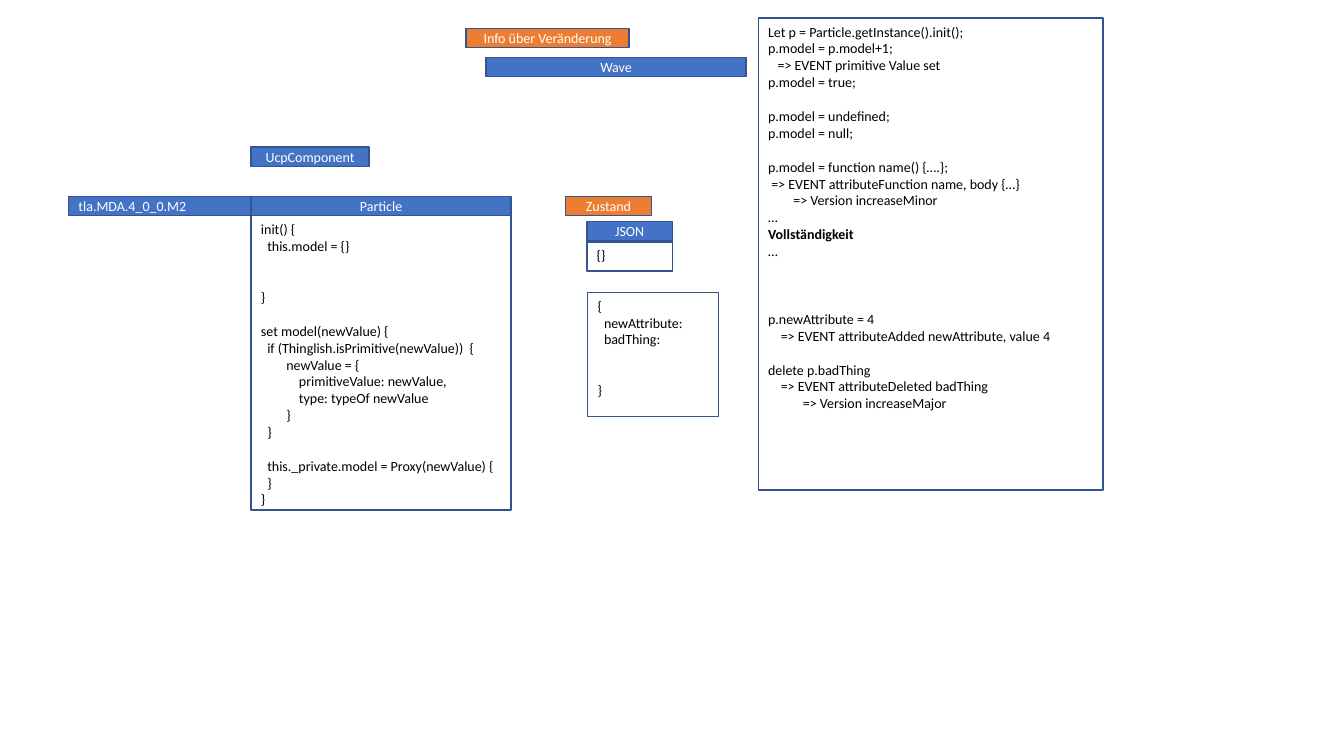
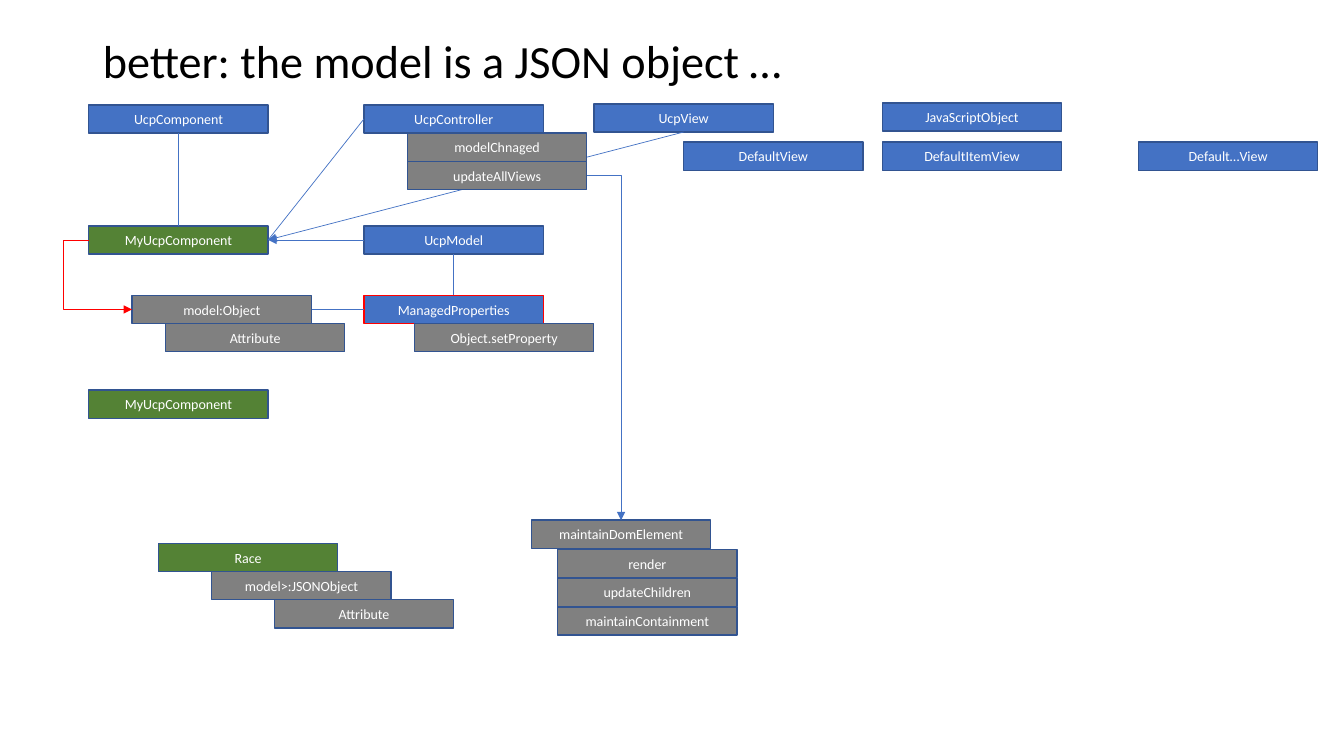
from lxml.etree import SubElement
from pptx import Presentation
from pptx.dml.color import RGBColor as RGB
from pptx.enum.shapes import MSO_CONNECTOR as Link, MSO_SHAPE as Shape
from pptx.enum.text import MSO_ANCHOR as Anchor, MSO_AUTO_SIZE as Fit, PP_ALIGN as Align
from pptx.oxml.ns import qn
from pptx.util import Inches, Pt

HUES = {
    "blue": "4472C4", "edge": "325491", "orange": "ED7D31", "green": "548235",
    "gray": "808080", "red": "FF0000", "white": "FFFFFF", "black": "000000",
}
FONT = "Calibri"
SIZE = 10
SPACE = 0.226 * SIZE  # width of one blank, in points
LEAD = 1.22 * SIZE    # height of one line, in points
TOP, LEFT, BOTTOM, RIGHT = range(4)  # connection sites of a rectangle

INIT = """\
init() {
  this.model = {}


}

set model(newValue) {
  if (Thinglish.isPrimitive(newValue))  {
        newValue = {
            primitiveValue: newValue,
            type: typeOf newValue
        }
  }

  this._private.model = Proxy(newValue) {
  }
}"""

USAGE = """\
Let p = Particle.getInstance().init();
p.model = p.model+1;
   => EVENT primitive Value set
p.model = true;

p.model = undefined;
p.model = null;

p.model = function name() {….};
 => EVENT attributeFunction name, body {…}
        => Version increaseMinor
…
Vollständigkeit
…



p.newAttribute = 4
    => EVENT attributeAdded newAttribute, value 4

delete p.badThing
    => EVENT attributeDeleted badThing
           => Version increaseMajor"""

STATE = """\
{
  newAttribute:
  badThing:


}"""


def hue(name):
    return RGB.from_string(HUES[name])


class Deck:
    """Holds the shared style and the slide being filled."""

    def __init__(self):
        self.prs = Presentation()
        self.prs.slide_width = Inches(13.33)
        self.prs.slide_height = Inches(7.5)
        self.slide = None

    def page(self, title=None):
        layout = self.prs.slide_layouts[5 if title else 6]
        self.slide = self.prs.slides.add_slide(layout)
        if title:
            self.title(title)

    def title(self, text):
        head = self.slide.shapes.title
        head.left, head.top = Inches(0.92), Inches(0.4)
        head.width, head.height = Inches(11.5), Inches(0.53)
        frame = head.text_frame
        frame.auto_size = Fit.NONE
        frame.vertical_anchor = Anchor.MIDDLE
        par = frame.paragraphs[0]
        par.alignment = Align.LEFT
        par.line_spacing = 0.7
        self.run(par, text, "black", 33)

    def run(self, par, text, color, size=SIZE, bold=False):
        run = par.add_run()
        run.text = text
        font = run.font
        font.name, font.size, font.bold = FONT, Pt(size), bold
        font.color.rgb = hue(color)

    def rect(self, x, y, w, h, fill, edge="edge"):
        box = self.slide.shapes.add_shape(
            Shape.RECTANGLE, Inches(x), Inches(y), Inches(w), Inches(h))
        box.shadow.inherit = False
        box.fill.solid()
        box.fill.fore_color.rgb = hue(fill)
        box.line.color.rgb = hue(edge)
        box.line.width = Pt(1)
        return box

    def label(self, text, x, y, w=1.78, h=0.28, fill="blue", edge="edge",
              align=Align.CENTER):
        box = self.rect(x, y, w, h, fill, edge)
        box.text_frame.vertical_anchor = Anchor.MIDDLE
        par = box.text_frame.paragraphs[0]
        par.alignment = align
        self.run(par, text, "white")
        return box

    def stack(self, texts, x, y, step=0.28):
        """Gray labels below one another; returns the last."""
        for i, text in enumerate(texts):
            box = self.label(text, x, y + i * step, fill="gray")
        return box

    def code(self, text, x, y, w, h, bold=None):
        """Panel of code: leading blanks become indents, empty lines spacing."""
        frame = self.rect(x, y, w, h, "white").text_frame
        frame.vertical_anchor = Anchor.TOP
        par, gap = frame.paragraphs[0], 0
        for i, line in enumerate(text.splitlines()):
            words = line.lstrip()
            if not words:
                gap += 1
                continue
            if i:
                par = frame.add_paragraph()
            par.alignment = Align.LEFT
            par.space_before = Pt(gap * LEAD)
            indent = Pt((len(line) - len(words)) * SPACE)
            par._p.get_or_add_pPr().set("marL", str(indent))
            self.run(par, words, "black", bold=words == bold)
            gap = 0

    def link(self, start, out, end, into, color="blue", arrow=False,
             kind=Link.STRAIGHT):
        line = self.slide.shapes.add_connector(kind, 0, 0, 0, 0)
        line.begin_connect(start, out)
        line.end_connect(end, into)
        line.line.color.rgb = hue(color)
        line.line.width = Pt(0.5)
        props = line._element.spPr
        if arrow:
            SubElement(props.find(qn("a:ln")), qn("a:tailEnd"), type="triangle")
        SubElement(props, qn("a:effectLst"))
        return props.find(qn("a:prstGeom"))

    def bend(self, *ends, color="blue", adj=None):
        """Elbow arrow: one corner, or two with the middle leg at adj."""
        geom = self.link(*ends, color=color, arrow=True, kind=Link.ELBOW)
        if adj is None:
            geom.set("prst", "bentConnector2")
        else:
            guides = geom.find(qn("a:avLst"))
            SubElement(guides, qn("a:gd"), name="adj1", fmla=f"val {adj}")


def particle(deck):
    deck.page()
    bar = 0.19
    for text, x, y, w, fill in (
        ("Particle", 2.49, 1.95, 2.58, "blue"),
        ("JSON", 5.82, 2.2, 0.85, "blue"),
        ("UcpComponent", 2.49, 1.46, 1.17, "blue"),
        ("Wave", 4.82, 0.57, 2.58, "blue"),
        ("Zustand", 5.61, 1.95, 0.85, "orange"),
        ("Info über Veränderung", 4.62, 0.28, 1.62, "orange"),
    ):
        deck.label(text, x, y, w, bar, fill)
    deck.label("tla.MDA.4_0_0.M2", 0.68, 1.95, 1.81, bar, align=Align.LEFT)
    deck.code(INIT, 2.49, 2.14, 2.58, 2.92)
    deck.code("{}", 5.82, 2.4, 0.85, 0.29)
    deck.code(USAGE, 7.52, 0.18, 3.42, 4.68, bold="Vollständigkeit")
    deck.code(STATE, 5.83, 2.9, 1.3, 1.23)


def model(deck):
    deck.page("better: the model is a JSON object …")
    col1, col2 = 0.88, 3.61
    row1, row2, row3 = 1.04, 2.24, 2.93

    base = deck.label("UcpComponent", col1, row1)
    mine = deck.label("MyUcpComponent", col1, row2, fill="green")
    data = deck.label("model:Object", 1.31, row3, fill="gray")
    ucp = deck.label("UcpModel", col2, row2)
    ctrl = deck.label("UcpController", col2, row1)
    view = deck.label("UcpView", 5.89, 1.03)
    for text, x, y in (
        ("DefaultView", 6.78, 1.41),
        ("DefaultItemView", 8.75, 1.41),
        ("Default…View", 11.29, 1.41),
        ("JavaScriptObject", 8.75, 1.02),
    ):
        deck.label(text, x, y)
    props = deck.label("ManagedProperties", col2, row3, edge="red")

    deck.link(mine, RIGHT, ctrl, LEFT)
    deck.link(base, BOTTOM, mine, TOP)
    deck.link(props, TOP, ucp, BOTTOM)
    deck.link(props, LEFT, data, RIGHT)
    deck.link(view, BOTTOM, mine, RIGHT, arrow=True)
    deck.link(ucp, LEFT, mine, RIGHT, arrow=True)
    deck.bend(mine, LEFT, data, LEFT, color="red", adj=-58600)

    for text, x, y, fill in (
        ("Object.setProperty", 4.11, 3.21, "gray"),
        ("Attribute", 1.64, 3.21, "gray"),
        ("MyUcpComponent", col1, 3.87, "green"),
        ("Race", 1.57, 5.39, "green"),
        ("model>:JSONObject", 2.1, 5.67, "gray"),
        ("Attribute", 2.72, 5.95, "gray"),
    ):
        deck.label(text, x, y, fill=fill)

    update = deck.stack(("modelChnaged", "updateAllViews"), 4.04, 1.32)
    dom = deck.label("maintainDomElement", 5.27, 5.16, fill="gray")
    deck.stack(("render", "updateChildren", "maintainContainment"), 5.53, 5.45, 0.285)
    deck.bend(update, RIGHT, dom, TOP)


def main():
    deck = Deck()
    particle(deck)
    model(deck)
    deck.prs.save("out.pptx")


if __name__ == "__main__":
    main()
